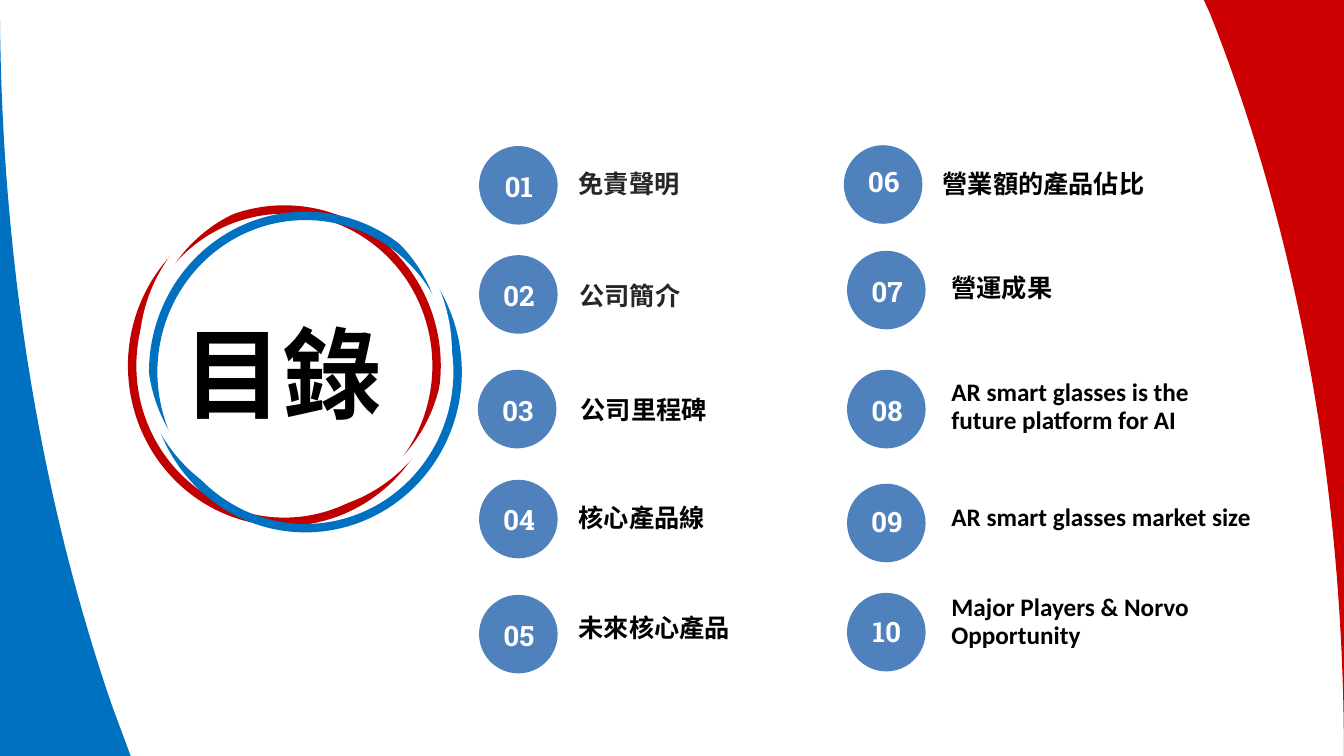
"""Build the contents slide with ten numbered topics."""
from dataclasses import dataclass

import lxml.etree
import pptx
import pptx.dml.color
import pptx.enum.shapes
import pptx.enum.text
import pptx.oxml.ns
import pptx.util

Cm = pptx.util.Cm
Pt = pptx.util.Pt
ALIGN = pptx.enum.text.PP_ALIGN
ANCHOR = pptx.enum.text.MSO_ANCHOR
OVAL = pptx.enum.shapes.MSO_SHAPE.OVAL


@dataclass(frozen=True)
class Theme:
    red: str = "CC0000"
    ring_red: str = "C00000"
    blue: str = "0070C0"
    badge: str = "4F81BD"
    white: str = "FFFFFF"
    black: str = "000000"
    gray: str = "262626"
    latin: str = "Calibri"
    chinese: str = "Noto Sans CJK SC"
    numeral: str = "Roboto Slab"
    title_size: int = 71
    number_size: int = 20
    label_size: int = 18


THEME = Theme()
TITLE = "目錄"
EXACT = Pt(20)

# topic, font, colour, line spacing, badge (left, top), number drop, label (left, top, width)
TOPICS = [
    ("免責聲明", THEME.latin, THEME.gray, EXACT, (12.07, 3.68), 0.46, (14.33, 3.73, 7.67)),
    ("公司簡介", THEME.latin, THEME.gray, EXACT, (12.07, 6.43), 0.46, (14.35, 6.55, 9.47)),
    ("公司里程碑", THEME.chinese, THEME.black, EXACT, (12.04, 9.32), 0.46, (14.38, 9.42, 10.87)),
    ("核心產品線", THEME.chinese, THEME.black, 0.9, (12.07, 12.09), 0.46, (14.33, 12.17, 10.87)),
    ("未來核心產品", THEME.chinese, THEME.black, 0.9, (12.07, 14.99), 0.46, (14.33, 14.94, 10.87)),
    ("營業額的產品佔比", THEME.chinese, THEME.black, EXACT, (21.26, 3.66), 0.36, (23.5, 3.73, 8.53)),
    ("營運成果", THEME.chinese, THEME.black, 1.0, (21.34, 6.32), 0.46, (23.72, 6.32, 8.53)),
    ("AR smart glasses is the future platform for AI",
     THEME.latin, THEME.black, EXACT, (21.34, 9.32), 0.46, (23.72, 9.32, 8.05)),
    ("AR smart glasses market size",
     THEME.latin, THEME.black, EXACT, (21.34, 12.19), 0.41, (23.72, 12.12, 8.81)),
    ("Major Players & Norvo Opportunity",
     THEME.latin, THEME.black, EXACT, (21.34, 14.94), 0.41, (23.72, 14.73, 8.53)),
]
RINGS = [
    (THEME.ring_red, 3.33, 5.28),
    (THEME.blue, 3.86, 5.44),
    (THEME.white, 3.61, 4.93),
]
# colour, corners before the curve, curve points
SWOOSHES = [
    (THEME.red, [(30.33, 0), (33.86, 0)],
     [(33.86, 19.05), (33.86, 12.12), (32.61, 5.66), (30.48, 0.33)]),
    (THEME.blue, [(0, 0), (0, 19.15), (3.33, 19.15)],
     [(2.84, 17.83), (1.04, 12.62), (0, 6.53), (0, 0)]),
]
RING_SIZE = (7.67, 7.87)
BADGE_SIZE = (1.98, 1.98)
NUMBER_SIZE = (1.45, 1.12)
NUMBER_INDENT = 0.28
LABEL_HEIGHT = 1.85
CURVE_STEPS = 40


def rgb(value):
    return pptx.dml.color.RGBColor.from_string(value)


def write(box, text, font, size, color, align=ALIGN.LEFT, anchor=ANCHOR.TOP, spacing=1.0):
    frame = box.text_frame
    frame.word_wrap = True
    frame.auto_size = pptx.enum.text.MSO_AUTO_SIZE.NONE
    frame.vertical_anchor = anchor
    para = frame.paragraphs[0]
    para.alignment = align
    para.line_spacing = spacing
    para.space_before = Pt(0)
    span = para.add_run()
    span.text = text
    span.font.name = font
    span.font.size = Pt(size)
    span.font.bold = True
    span.font.color.rgb = rgb(color)
    east_asian = lxml.etree.Element(pptx.oxml.ns.qn("a:ea"), typeface=THEME.chinese)
    span.font._element.find(pptx.oxml.ns.qn("a:latin")).addnext(east_asian)


def add_circle(page, left, top, size, fill=None, line=None):
    circle = page.shapes.add_shape(OVAL, Cm(left), Cm(top), *map(Cm, size))
    circle.shadow.inherit = False
    if fill:
        circle.fill.solid()
        circle.fill.fore_color.rgb = rgb(fill)
    else:
        circle.fill.background()
    if line:
        circle.line.color.rgb = rgb(line)
        circle.line.width = Pt(6)
    else:
        circle.line.fill.background()


def curve_point(curve, t):
    weights = ((1 - t) ** 3, 3 * t * (1 - t) ** 2, 3 * t * t * (1 - t), t ** 3)
    return tuple(sum(w * point[axis] for w, point in zip(weights, curve)) for axis in (0, 1))


def add_swoosh(page, color, corners, curve):
    outline = corners + [curve_point(curve, step / CURVE_STEPS) for step in range(CURVE_STEPS + 1)]
    points = [(Cm(x), Cm(y)) for x, y in outline]
    builder = page.shapes.build_freeform(*points[0])
    builder.add_line_segments(points[1:], close=True)
    swoosh = builder.convert_to_shape()
    swoosh.shadow.inherit = False
    swoosh.fill.solid()
    swoosh.fill.fore_color.rgb = rgb(color)
    swoosh.line.fill.background()


def add_title(page):
    title = page.shapes.title
    title.left, title.top, title.width, title.height = Cm(4.32), Cm(7.72), Cm(6.93), Cm(3.35)
    frame = title.text_frame
    frame.margin_left = frame.margin_right = Cm(0.3)
    frame.margin_top = frame.margin_bottom = Cm(0.15)
    write(title, TITLE, THEME.chinese, THEME.title_size, THEME.black)


def add_topic(page, number, topic):
    text, font, color, spacing, (left, top), drop, (label_left, label_top, label_width) = topic
    add_circle(page, left, top, BADGE_SIZE, fill=THEME.badge)
    number_box = page.shapes.add_textbox(
        Cm(left + NUMBER_INDENT), Cm(top + drop), *map(Cm, NUMBER_SIZE))
    write(number_box, f"{number:02d}", THEME.numeral, THEME.number_size, THEME.white, ALIGN.CENTER)
    label_box = page.shapes.add_textbox(
        Cm(label_left), Cm(label_top), Cm(label_width), Cm(LABEL_HEIGHT))
    write(label_box, text, font, THEME.label_size, color, anchor=ANCHOR.MIDDLE, spacing=spacing)


def main():
    deck = pptx.Presentation()
    deck.slide_width, deck.slide_height = Cm(33.86), Cm(19.05)
    page = deck.slides.add_slide(deck.slide_layouts.get_by_name("Title Only"))
    for color, left, top in RINGS:
        add_circle(page, left, top, RING_SIZE, line=color)
    add_title(page)
    for swoosh in SWOOSHES:
        add_swoosh(page, *swoosh)
    for number, topic in enumerate(TOPICS, start=1):
        add_topic(page, number, topic)
    deck.save("out.pptx")


if __name__ == "__main__":
    main()
